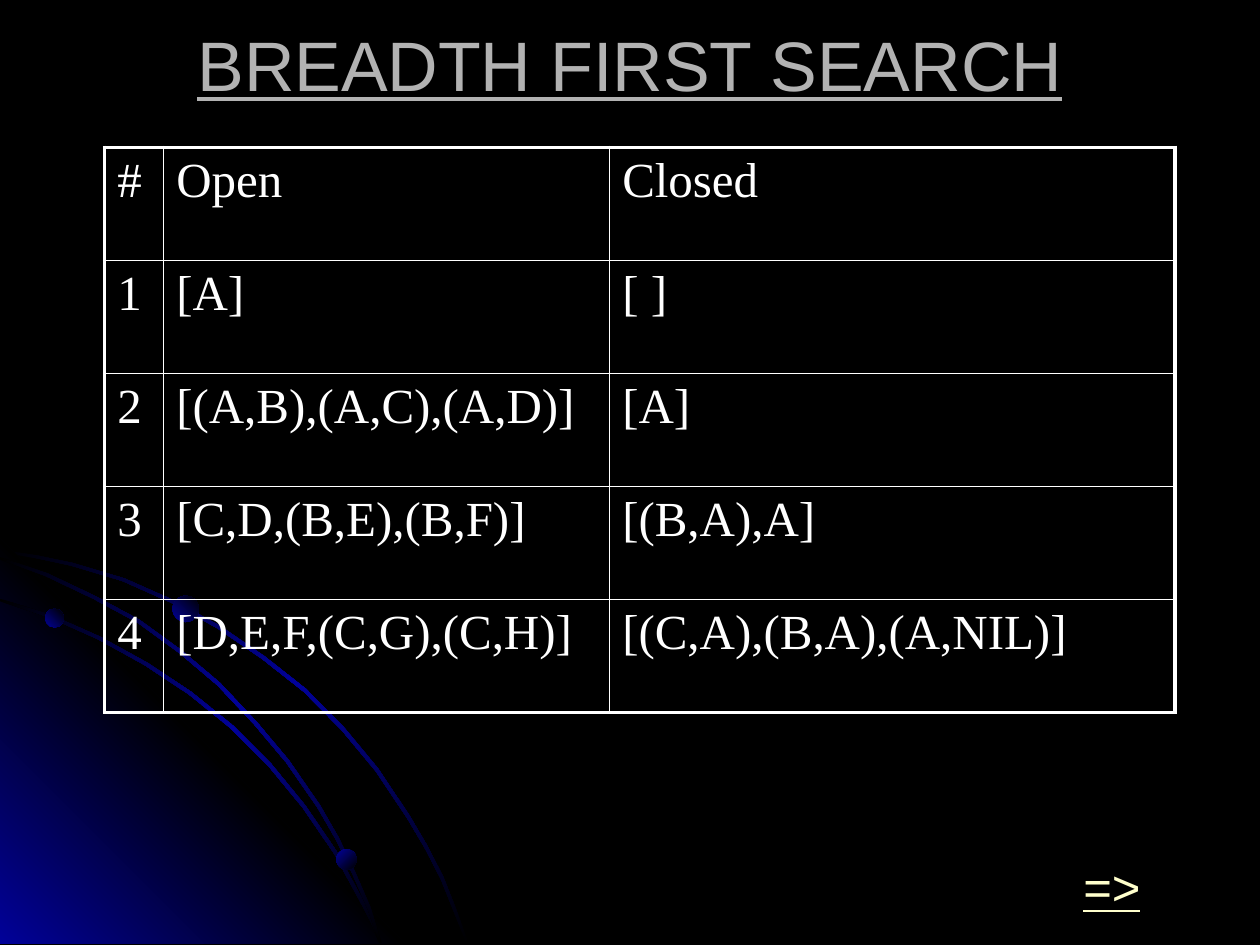
from lxml import etree
from pptx import Presentation
from pptx.dml.color import RGBColor
from pptx.enum.shapes import MSO_SHAPE
from pptx.enum.text import MSO_ANCHOR, MSO_AUTO_SIZE, PP_ALIGN
from pptx.oxml.ns import qn
from pptx.util import Cm, Pt

OVAL = MSO_SHAPE.OVAL
MIDDLE = MSO_ANCHOR.MIDDLE
GROW = MSO_AUTO_SIZE.SHAPE_TO_FIT_TEXT
CENTER, LEFT = PP_ALIGN.CENTER, PP_ALIGN.LEFT

BLACK = RGBColor(0x00, 0x00, 0x00)
BLUE = RGBColor(0x01, 0x01, 0x99)
WHITE = RGBColor(0xFF, 0xFF, 0xFF)
GRAY = RGBColor(0xB2, 0xB2, 0xB2)
CREAM = RGBColor(0xFF, 0xFF, 0xCC)

TITLE_FONT = {"name": "Arial", "size": Pt(40), "underline": True}
ARROW_FONT = {"name": "Arial", "size": Pt(28), "underline": True}
CELL_FONT = {"name": "Times New Roman", "size": Pt(28)}

# Lower edges of the arcs and the corner glow, in centimetres
OUTER_ARC = [(0, 11.13), (0.71, 11.25), (1.42, 11.4), (2.46, 11.71), (3.43, 12.14),
             (4.39, 12.67), (5.28, 13.28), (6.12, 13.94), (6.88, 14.71), (7.57, 15.54),
             (8.2, 16.48), (8.56, 17.09), (8.89, 17.73), (9.14, 18.36), (9.4, 19.02)]
INNER_ARC = [(0, 12.12), (0.99, 12.45), (1.96, 12.88), (2.92, 13.41), (3.81, 14),
             (4.65, 14.68), (5.41, 15.44), (6.1, 16.28), (6.73, 17.2), (7.24, 18.14),
             (7.47, 18.59), (7.65, 19.02)]
MIDDLE_ARC = [(0, 11.28), (0.91, 11.61), (1.88, 12.07), (2.77, 12.55), (3.61, 13.16),
              (4.39, 13.82), (5.13, 14.61), (5.77, 15.37), (6.4, 16.28), (6.78, 16.94),
              (7.11, 17.63), (7.42, 18.34), (7.65, 19.02)]
GLOW = [(8.18, 19.03), (0, 19.03), (0, 10.85)]
ARC_WIDTH = 0.05

# Left, top, diameter, gradient angle
DOTS = [(0.91, 12.27, 0.38, 315), (6.78, 17.12, 0.41, 45), (3.48, 12.01, 0.53, 315)]

COLUMN_WIDTHS = [1.19, 8.99, 11.4]
ROW_HEIGHT = 2.28
SEARCH_STEPS = [
    ("#", "Open", "Closed"),
    ("1", "[A]", "[ ]"),
    ("2", "[(A,B),(A,C),(A,D)]", "[A]"),
    ("3", "[C,D,(B,E),(B,F)]", "[(B,A),A]"),
    ("4", "[D,E,F,(C,G),(C,H)]", "[(C,A),(B,A),(A,NIL)]"),
]


def set_gradient(shape, colors, angle):
    """Fill with evenly spaced colours; the angle runs clockwise."""
    shape.shadow.inherit = False
    shape.line.fill.background()
    shape.fill.gradient()
    gradient = shape._element.spPr.find(qn("a:gradFill"))
    stops = gradient.find(qn("a:gsLst"))
    for stop in list(stops):
        stops.remove(stop)
    for index, color in enumerate(colors):
        position = 100000 * index // (len(colors) - 1)
        stop = etree.SubElement(stops, qn("a:gs"), pos=str(position))
        etree.SubElement(stop, qn("a:srgbClr"), val=str(color))
    gradient.find(qn("a:lin")).set("ang", str(angle * 60000))


def add_outline(slide, points, colors, angle):
    points = [(Cm(x), Cm(y)) for x, y in points]
    builder = slide.shapes.build_freeform(*points[0])
    builder.add_line_segments(points[1:], close=True)
    set_gradient(builder.convert_to_shape(), colors, angle)


def add_arc(slide, lower):
    """Thicken a lower edge into a band that stays flush at both ends."""
    (first_x, first_y), *inside, (last_x, last_y) = lower
    upper = [(first_x, first_y - ARC_WIDTH)]
    upper += [(x + ARC_WIDTH, y - ARC_WIDTH) for x, y in inside]
    upper.append((last_x + ARC_WIDTH, last_y))
    add_outline(slide, lower + upper[::-1], [BLACK, BLUE, BLACK], 45)


def add_dot(slide, left, top, diameter, angle):
    dot = slide.shapes.add_shape(OVAL, Cm(left), Cm(top), Cm(diameter), Cm(diameter))
    set_gradient(dot, [BLUE, BLACK], angle)


def write_text(frame, text, font_format, color, alignment=LEFT):
    paragraph = frame.paragraphs[0]
    paragraph.alignment = alignment
    run = paragraph.add_run()
    run.text = text
    for name, value in font_format.items():
        setattr(run.font, name, value)
    run.font.color.rgb = color


def add_text(slide, box, text, font_format, color, frame_format, alignment=LEFT):
    frame = slide.shapes.add_textbox(*map(Cm, box)).text_frame
    for name, value in frame_format.items():
        setattr(frame, name, value)
    write_text(frame, text, font_format, color, alignment)


def set_borders(cell, widths):
    properties = cell._tc.get_or_add_tcPr()
    for index, (side, width) in enumerate(widths.items()):
        line = etree.Element(qn(f"a:ln{side}"), w=str(Pt(width)))
        fill = etree.SubElement(line, qn("a:solidFill"))
        etree.SubElement(fill, qn("a:srgbClr"), val=str(WHITE))
        properties.insert(index, line)


def add_step_table(slide):
    last_row, last_column = len(SEARCH_STEPS) - 1, len(COLUMN_WIDTHS) - 1
    table = slide.shapes.add_table(
        last_row + 1, last_column + 1, Cm(2.11), Cm(2.97),
        Cm(sum(COLUMN_WIDTHS)), Cm(ROW_HEIGHT * len(SEARCH_STEPS))).table
    table.first_row = table.horz_banding = False
    for column, width in zip(table.columns, COLUMN_WIDTHS):
        column.width = Cm(width)
    for row_index, texts in enumerate(SEARCH_STEPS):
        table.rows[row_index].height = Cm(ROW_HEIGHT)
        for column_index, text in enumerate(texts):
            cell = table.cell(row_index, column_index)
            cell.fill.background()
            write_text(cell.text_frame, text, CELL_FONT, WHITE)
            on_edge = {"L": column_index == 0, "R": column_index == last_column,
                       "T": row_index == 0, "B": row_index == last_row}
            set_borders(cell, {side: 2.25 if edge else 1
                               for side, edge in on_edge.items()})


def main():
    presentation = Presentation()
    presentation.slide_width, presentation.slide_height = Cm(25.4), Cm(19.05)
    slide = presentation.slides.add_slide(presentation.slide_layouts[6])
    slide.background.fill.solid()
    slide.background.fill.fore_color.rgb = BLACK

    # Corner decoration
    add_arc(slide, OUTER_ARC)
    add_outline(slide, GLOW, [BLUE, BLACK, BLUE], 315)
    add_arc(slide, INNER_ARC)
    add_arc(slide, MIDDLE_ARC)
    for dot in DOTS:
        add_dot(slide, *dot)

    # Search steps, arrow and title
    add_step_table(slide)
    add_text(slide, (21.59, 17.15, 1.68, 1.45), "=>", ARROW_FONT, CREAM,
             {"word_wrap": False, "auto_size": GROW})
    add_text(slide, (1.9, 0.64, 21.6, 1.27), "BREADTH FIRST SEARCH", TITLE_FONT, GRAY,
             {"word_wrap": True, "vertical_anchor": MIDDLE}, CENTER)

    presentation.save("out.pptx")


if __name__ == "__main__":
    main()
